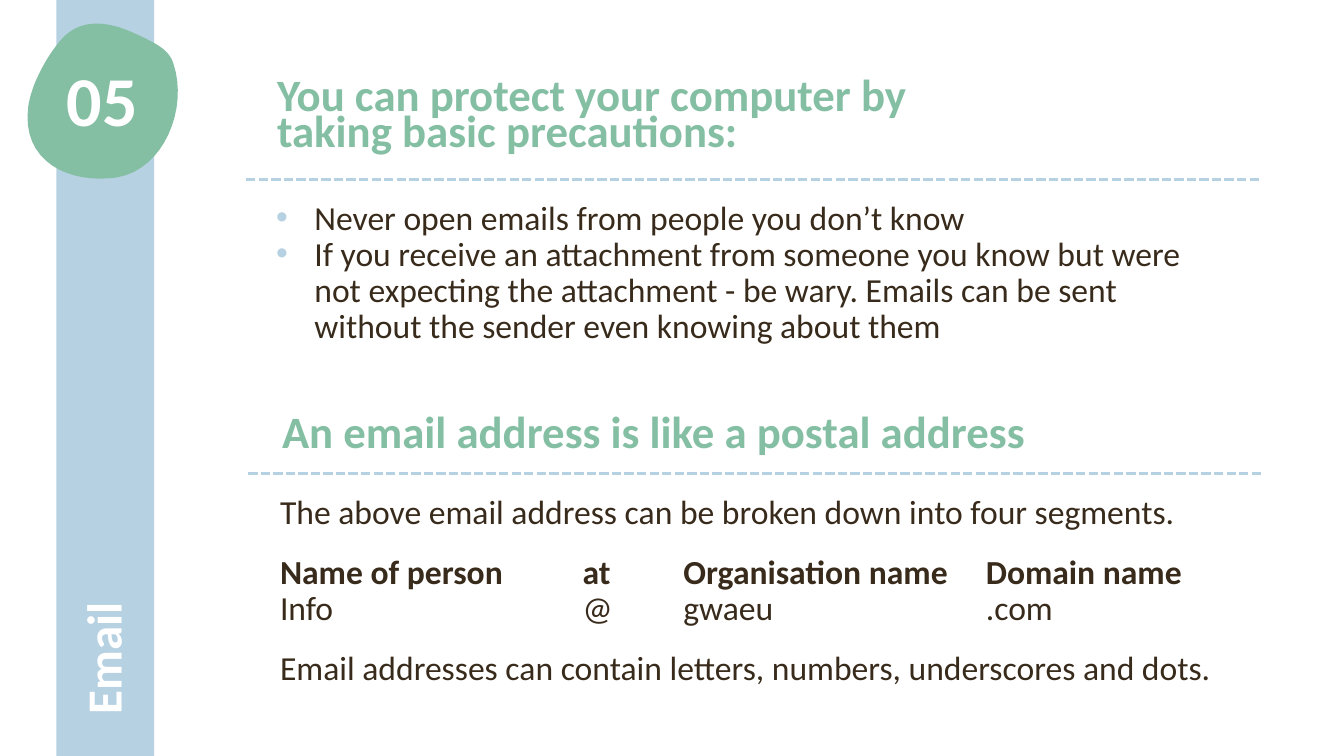
from pptx import Presentation, util as u
from pptx.dml.color import RGBColor
from pptx.enum import dml, shapes, text
from pptx.oxml import ns
from lxml import etree

# Slide grid: 40 columns by 30 rows
WIDTH, HEIGHT = u.Inches(13.33), u.Inches(7.5)
COLUMN, ROW = WIDTH / 40, HEIGHT / 30

BLUE, GREEN, BROWN, WHITE = "B6D1E1", "84BFA4", "382B1B", "FFFFFF"
LEADING = u.Pt(25.6)
HEADING = dict(size=u.Pt(32), bold=True, color=GREEN)
BODY = dict(size=u.Pt(24), bold=False, color=BROWN)
BODY_BOLD = BODY | dict(bold=True)
ADDRESS_TABS = (3, 4, 7)  # inches from the text edge

# Badge outline: start point, then two controls and an end for each curve
BADGE_START = (3.54, 1.08)
BADGE_CURVES = [
    ((2.94, 0.84), (2.31, 0.84), (1.83, 1.56)),
    ((1.38, 2.24), (0.93, 3.36), (0.84, 4.24)),
    ((0.63, 6.4), (2.04, 7.32), (3.48, 7.04)),
    ((4.89, 6.72), (5.61, 4.28), (5.16, 2.52)),
    ((5.04, 2), (4.68, 1.76), (4.32, 1.52)),
    ((4.08, 1.36), (3.81, 1.2), BADGE_START),
]


def rgb(value):
    return RGBColor.from_string(value)


def place(column, row):
    return round(column * COLUMN), round(row * ROW)


def paint(shape, color):
    shape.shadow.inherit = False
    shape.fill.solid()
    shape.fill.fore_color.rgb = rgb(color)
    shape.line.fill.background()


def add_band(page, column, row, columns, rows, color):
    band = page.shapes.add_shape(shapes.MSO_SHAPE.RECTANGLE,
                                 *place(column, row), *place(columns, rows))
    paint(band, color)


def add_blob(page, start, curves, color, steps=16):
    points, origin = [], start
    for first, second, end in curves:
        for step in range(1, steps + 1):
            t = step / steps
            weights = ((1 - t) ** 3, 3 * t * (1 - t) ** 2,
                       3 * t * t * (1 - t), t ** 3)
            corners = (origin, first, second, end)
            points.append(place(*(sum(w * c[axis] for w, c in zip(weights, corners))
                                  for axis in (0, 1))))
        origin = end
    builder = page.shapes.build_freeform(*place(*start))
    builder.add_line_segments(points, close=True)
    paint(builder.convert_to_shape(), color)


def add_rule(page, left, right, row):
    rule = page.shapes.add_connector(shapes.MSO_CONNECTOR.STRAIGHT,
                                     *place(right, row), *place(left, row))
    rule.line.color.rgb = rgb(BLUE)
    rule.line.width = u.Pt(2.25)
    rule.line.dash_style = dml.MSO_LINE.SQUARE_DOT
    etree.SubElement(rule._element.spPr, ns.qn("a:effectLst"))


def add_text(page, column, row, columns, rows, lines, rotation=0):
    """Each line is (words, font values, paragraph values)."""
    box = page.shapes.add_textbox(*place(column, row), *place(columns, rows))
    box.rotation = rotation
    frame = box.text_frame
    frame.word_wrap = True
    paras = []
    for index, (words, font, layout) in enumerate(lines):
        para = frame.add_paragraph() if index else frame.paragraphs[0]
        for name, value in layout.items():
            setattr(para, name, value)
        span = para.add_run()
        span.text = words
        span.font.name = "Calibri"
        for name, value in font.items():
            if name == "color":
                span.font.color.rgb = rgb(value)
            else:
                setattr(span.font, name, value)
        paras.append(para)
    return paras


def add_bullet(para):
    props = para._p.get_or_add_pPr()
    props.set("marL", str(u.Inches(0.39)))
    props.set("indent", str(u.Inches(-0.38)))
    color = etree.SubElement(props, ns.qn("a:buClr"))
    etree.SubElement(color, ns.qn("a:srgbClr"), val=BLUE)
    etree.SubElement(props, ns.qn("a:buFont"), typeface="Arial")
    etree.SubElement(props, ns.qn("a:buChar"), char="•")


def add_tabs(para, stops):
    tabs = etree.SubElement(para._p.get_or_add_pPr(), ns.qn("a:tabLst"))
    for stop in stops:
        etree.SubElement(tabs, ns.qn("a:tab"), pos=str(u.Inches(stop)), algn="l")


def main():
    deck = Presentation()
    deck.slide_width, deck.slide_height = WIDTH, HEIGHT
    page = deck.slides.add_slide(deck.slide_layouts[6])
    plain = dict(line_spacing=LEADING)
    spaced = plain | dict(space_before=u.Pt(17))

    # Side band with chapter number and name
    add_band(page, 1.68, 0, 2.91, 30, BLUE)
    add_blob(page, BADGE_START, BADGE_CURVES, GREEN)
    add_text(page, -9.45, 10.52, 25.2, 2.84, [
        ("Email", dict(size=u.Pt(35), bold=True, color=WHITE),
         dict(line_spacing=u.Pt(40.2)))], rotation=270)
    add_text(page, 0.51, 2.44, 5.07, 3.76, [
        ("05", dict(size=u.Pt(50), bold=True, color=WHITE),
         dict(line_spacing=0.9, alignment=text.PP_ALIGN.CENTER))])

    # Precautions
    add_text(page, 7.95, 3.16, 22.2, 4.88, [
        ("You can protect your computer by taking basic precautions:",
         HEADING, plain)])
    add_rule(page, 7.29, 37.47, 7.12)
    for para in add_text(page, 7.89, 7.8, 29, 6.96, [
            ("Never open emails from people you don’t know", BODY, plain),
            ("If you receive an attachment from someone you know but were not "
             "expecting the attachment - be wary. Emails can be sent without "
             "the sender even knowing about them", BODY, plain)]):
        add_bullet(para)

    # Parts of an address
    add_text(page, 8.1, 16.52, 29.9, 1.96, [
        ("An email address is like a postal address", HEADING, plain)])
    add_rule(page, 7.38, 37.53, 18.8)
    paras = add_text(page, 8.04, 19.48, 29, 6.96, [
        ("The above email address can be broken down into four segments.",
         BODY, plain),
        ("Name of person\tat\tOrganisation name\tDomain name", BODY_BOLD, spaced),
        ("Info\t@\tgwaeu\t.com", BODY, plain),
        ("Email addresses can contain letters, numbers, underscores and dots.",
         BODY, spaced)])
    for para in paras[1:3]:
        add_tabs(para, ADDRESS_TABS)

    deck.save("out.pptx")


if __name__ == "__main__":
    main()
